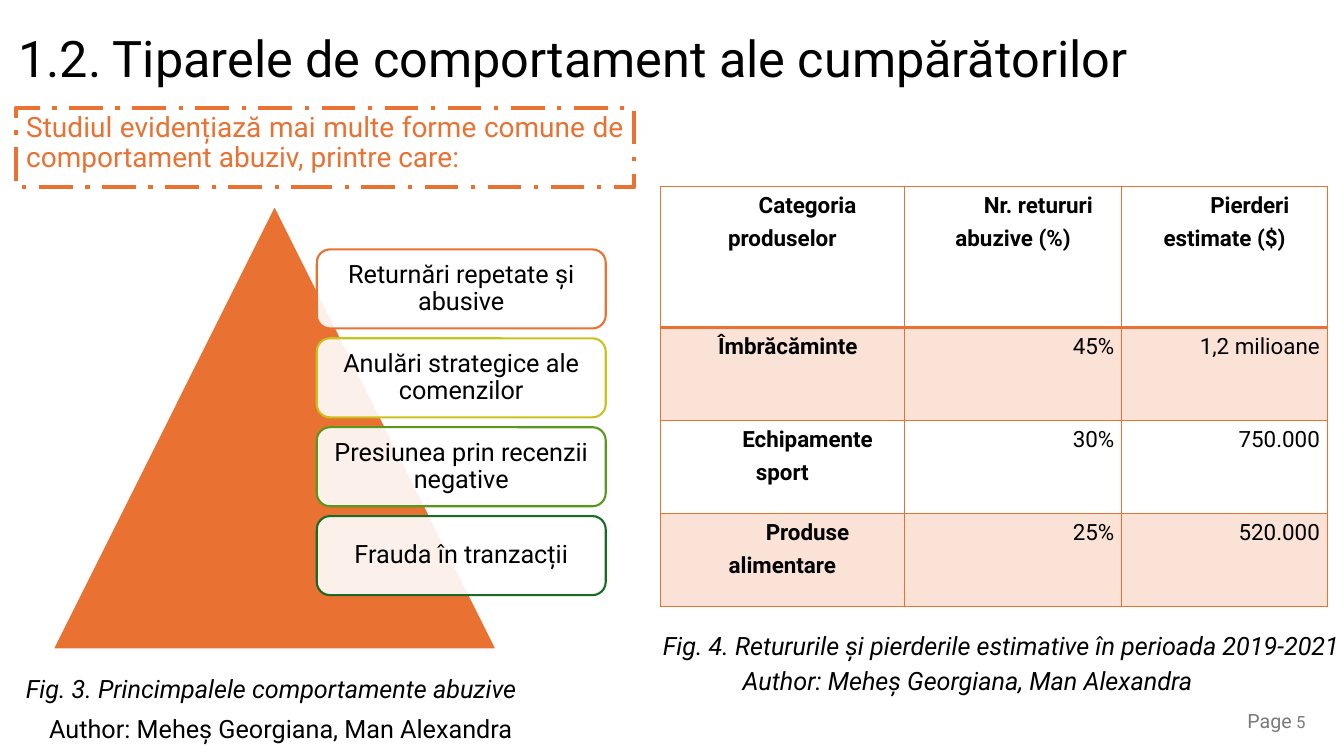
import pptx
import pptx.util
import pptx.dml.color
import pptx.enum.dml
import pptx.enum.shapes
import pptx.enum.text
import pptx.oxml
import pptx.oxml.ns

Pt = pptx.util.Pt
SHAPE = pptx.enum.shapes.MSO_SHAPE
ALIGN = pptx.enum.text.PP_ALIGN
MIDDLE = pptx.enum.text.MSO_ANCHOR.MIDDLE
FONT = "Roboto"
ORANGE, BLACK, WHITE, GRAY = "E97132", "000000", "FFFFFF", "797979"
NS = pptx.oxml.ns.nsdecls("a")


def paint(target, tone):
    target.rgb = pptx.dml.color.RGBColor.from_string(tone)


def fill_in(fill, tone, alpha=100):
    """Fill with a solid colour at the given opacity in percent."""
    fill.solid()
    paint(fill.fore_color, tone)
    if alpha < 100:
        color = fill._xPr.find(".//" + pptx.oxml.ns.qn("a:srgbClr"))
        color.append(pptx.oxml.parse_xml(f'<a:alpha {NS} val="{alpha * 1000}"/>'))


def outline(shape, tone, width):
    paint(shape.line.color, tone)
    shape.line.width = Pt(width)


def style(run, size, tone=BLACK, bold=False, italic=False):
    font = run.font
    font.name, font.size = FONT, Pt(size)
    font.bold, font.italic = bold, italic
    paint(font.color, tone)


def write(frame, text, size, tone=BLACK, align=ALIGN.LEFT, space=1.0, **looks):
    frame.word_wrap = True
    frame.text = text
    para = frame.paragraphs[0]
    para.alignment, para.line_spacing = align, space
    for run in para.runs:
        style(run, size, tone, **looks)
    return para


def place(shape, box):
    shape.left, shape.top, shape.width, shape.height = map(Pt, box)


def add_title(slide, box):
    title = slide.shapes.title
    place(title, box)
    title.text_frame.vertical_anchor = MIDDLE
    write(title.text_frame, "1.2. Tiparele de comportament ale cumpărătorilor", 36, space=0.9)


def add_intro(slide, box):
    intro = slide.placeholders[1]
    place(intro, box)
    outline(intro, ORANGE, 3)
    intro.line.dash_style = pptx.enum.dml.MSO_LINE.LONG_DASH_DOT
    frame = intro.text_frame
    frame.auto_size = pptx.enum.text.MSO_AUTO_SIZE.NONE
    para = write(
        frame,
        "Studiul evidențiază mai multe forme comune de comportament abuziv, printre care:",
        20, ORANGE, ALIGN.JUSTIFY, 0.9)
    para.space_before = Pt(0)
    props = para._p.get_or_add_pPr()
    props.set("marL", "0")
    props.set("indent", "0")
    props.append(pptx.oxml.parse_xml(f"<a:buNone {NS}/>"))


def add_shape(slide, kind, box):
    shape = slide.shapes.add_shape(kind, *map(Pt, box))
    shape.shadow.inherit = False
    return shape


def add_pyramid(slide, box):
    """Draw a triangle with a column of cards over its right half."""
    left, top, width, height = box
    base = add_shape(slide, SHAPE.ISOSCELES_TRIANGLE, box)
    fill_in(base.fill, ORANGE)
    outline(base, WHITE, 1.5)
    cards = [
        ("Returnări repetate și abusive", ORANGE),
        ("Anulări strategice ale comenzilor", "CBC11E"),
        ("Presiunea prin recenzii negative", "56991D"),
        ("Frauda în tranzacții", "196B24"),
    ]
    pitch = height / 5
    for i, (text, tone) in enumerate(cards):
        spot = (left + width * 0.595, top + height * 0.1 + i * pitch, width * 0.65, pitch * 8 / 9)
        card = add_shape(slide, SHAPE.ROUNDED_RECTANGLE, spot)
        fill_in(card.fill, WHITE, 90)
        outline(card, tone, 1.5)
        frame = card.text_frame
        frame.margin_left = frame.margin_right = Pt(5.4)
        frame.margin_top = frame.margin_bottom = Pt(5.4)
        frame.vertical_anchor = MIDDLE
        write(frame, text, 18, align=ALIGN.CENTER, space=0.9)


def border(cell, widths):
    """Draw the left, right, top and bottom edges in the given widths."""
    props = cell._tc.get_or_add_tcPr()
    for i, (side, width) in enumerate(zip("LRTB", widths)):
        props.insert(i, pptx.oxml.parse_xml(
            f'<a:ln{side} {NS} w="{Pt(width)}"><a:solidFill>'
            f'<a:srgbClr val="{ORANGE}"/></a:solidFill></a:ln{side}>'))


def add_losses(slide, box):
    rows = [
        ("Categoria produselor", "Nr. retururi abuzive (%)", "Pierderi estimate ($)"),
        ("Îmbrăcăminte", "45%", "1,2 milioane"),
        ("Echipamente sport", "30%", "750.000"),
        ("Produse alimentare", "25%", "520.000"),
    ]
    table = slide.shapes.add_table(len(rows), 3, *map(Pt, box)).table
    table.first_row = table.horz_banding = False
    for col, width in zip(table.columns, (174.5, 155.3, 146.8)):
        col.width = Pt(width)
    for r, row in enumerate(rows):
        table.rows[r].height = Pt(66.4 if r else 100.8)
        for c, text in enumerate(row):
            cell = table.cell(r, c)
            cell.margin_left = cell.margin_right = Pt(5.4)
            cell.margin_top = cell.margin_bottom = 0
            if r % 2:
                fill_in(cell.fill, ORANGE, 20)
            else:
                cell.fill.background()
            align = ALIGN.RIGHT if r and c else ALIGN.LEFT if r == 1 else ALIGN.CENTER
            para = write(cell.text_frame, text, 16, align=align, space=1.25,
                         bold=r == 0 or c == 0)
            props = para._p.get_or_add_pPr()
            props.set("marL", "0")
            props.set("indent", str(Pt(36)))
            border(cell, (1, 1, 2 if r == 1 else 1, 1 if r else 2))


def add_note(slide, box, text, **looks):
    note = slide.shapes.add_textbox(*map(Pt, box))
    write(note.text_frame, text, 18, **looks)


def add_page(slide, box):
    page = slide.shapes.add_textbox(*map(Pt, box))
    page.text_frame.vertical_anchor = MIDDLE
    para = write(page.text_frame, "Page", 14, GRAY, ALIGN.RIGHT)
    count = para.add_run()
    count.text = " 5"
    style(count, 12, GRAY)


def main():
    deck = pptx.Presentation()
    deck.slide_width, deck.slide_height = Pt(960), Pt(540)
    slide = deck.slides.add_slide(deck.slide_layouts[1])
    author = "Author: Meheș Georgiana, Man Alexandra"
    add_title(slide, (5.8, 10.8, 933.8, 65.5))
    add_intro(slide, (11.5, 77, 441.4, 56.9))
    add_losses(slide, (471.6, 133.2, 476.6, 300))
    add_page(slide, (723.6, 500.4, 216, 28.8))
    add_note(slide, (452.9, 446.4, 524.9, 29),
             "Fig. 4. Retururile și pierderile estimative în perioada 2019-2021",
             align=ALIGN.CENTER, italic=True)
    add_pyramid(slide, (37.4, 146.4, 317.5, 317.5))
    add_note(slide, (523.4, 471.6, 430, 29), author, italic=True)
    add_note(slide, (11.5, 477.4, 424.8, 29),
             "Fig. 3. Princimpalele comportamente abuzive", italic=True)
    add_note(slide, (28.1, 506.2, 513.4, 29), author)
    deck.save("out.pptx")


if __name__ == "__main__":
    main()
